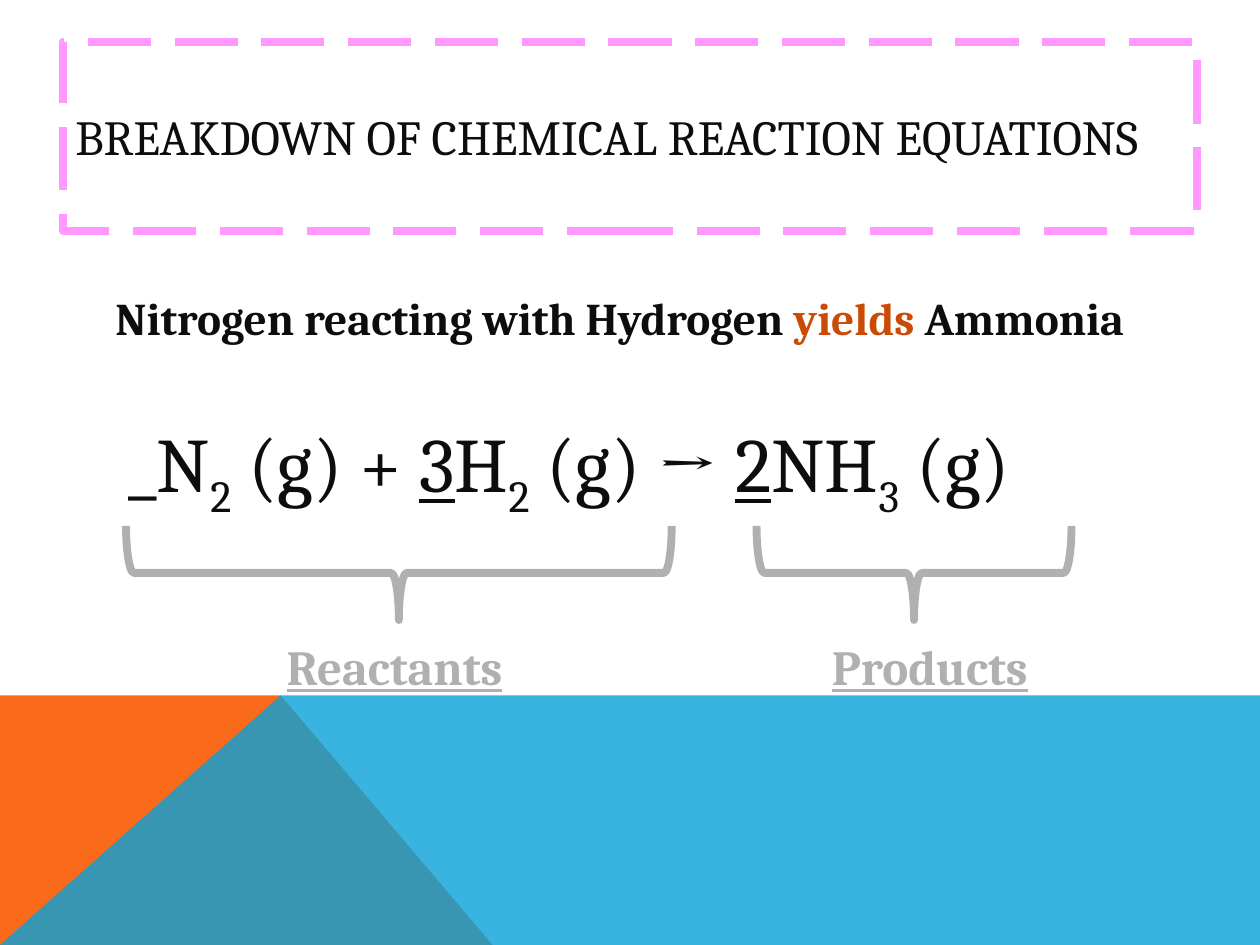
from dataclasses import dataclass

import pptx
import pptx.dml.color
import pptx.enum.dml
import pptx.enum.shapes
import pptx.enum.text
import pptx.oxml
import pptx.oxml.ns
import pptx.util
from pptx.util import Cm

COLORS = {
    "ink": "0D0D0D",
    "yields": "CA4B05",
    "gray": "AFB0B2",
    "pink": "FF99FF",
    "orange": "F96A1B",
    "blue": "08A1D9",
}
FONT = "Cambria"
WIDTH, HEIGHT = 25.4, 19.05
BAND_TOP, PEAK = 14.02, 5.66
BRACE_TOP, BRACE_DEPTH = 10.6, 1.9
LABEL_TOP, LABEL_WIDTH, LABEL_HEIGHT = 12.7, 6.15, 1.47


@dataclass
class Piece:
    text: str
    color: str | None = None
    underline: bool = False
    subscript: bool = False


@dataclass
class Side:
    label: str
    label_left: float
    brace_left: float
    brace_width: float


HEADLINE = [Piece("BREAKDOWN OF CHEMICAL REACTION EQUATIONS")]
SENTENCE = [
    Piece("Nitrogen reacting with Hydrogen ", "ink"),
    Piece("yields ", "yields"),
    Piece("Ammonia", "ink"),
]
EQUATION = [
    Piece("_N"),
    Piece("2", subscript=True),
    Piece(" (g) + "),
    Piece("3", underline=True),
    Piece("H"),
    Piece("2", subscript=True),
    Piece(" (g) → "),
    Piece("2", underline=True),
    Piece("NH"),
    Piece("3", subscript=True),
    Piece(" (g)"),
]
SIDES = [
    Side("Reactants", 4.88, 2.54, 11),
    Side("Products", 15.67, 15.25, 6.35),
]


def rgb(name: str) -> pptx.dml.color.RGBColor:
    return pptx.dml.color.RGBColor.from_string(COLORS[name])


def write(shape, pieces: list[Piece], size: float, color: str = "ink",
          bold: bool = False, centered: bool = False):
    frame = shape.text_frame
    frame.word_wrap = True
    paragraph = frame.paragraphs[0]
    align = pptx.enum.text.PP_ALIGN
    paragraph.alignment = align.CENTER if centered else align.LEFT
    font = paragraph.font
    font.name, font.size, font.bold = FONT, pptx.util.Pt(size), bold
    if not any(piece.color for piece in pieces):
        font.color.rgb = rgb(color)
    for piece in pieces:
        run = paragraph.add_run()
        run.text = piece.text
        if piece.color:
            run.font.color.rgb = rgb(piece.color)
        if piece.underline:
            run.font.underline = True
        if piece.subscript:
            run.font._element.set("baseline", "-25000")
    return paragraph


def add_band(slide, points: list[tuple[float, float]], color: str, opacity: int = 100) -> None:
    corners = [(Cm(x), Cm(y)) for x, y in points]
    builder = slide.shapes.build_freeform(*corners[0])
    builder.add_line_segments(corners[1:], close=True)
    band = builder.convert_to_shape()
    band.shadow.inherit = False
    band.fill.solid()
    band.fill.fore_color.rgb = rgb(color)
    band.line.fill.background()
    if opacity < 100:
        srgb = band._element.spPr.find(".//" + pptx.oxml.ns.qn("a:srgbClr"))
        alpha = pptx.oxml.parse_xml(f'<a:alpha {pptx.oxml.ns.nsdecls("a")} val="{opacity * 1000}"/>')
        srgb.append(alpha)


def add_outline(slide, kind, left: float, top: float, width: float, height: float, color: str):
    shape = slide.shapes.add_shape(kind, Cm(left), Cm(top), Cm(width), Cm(height))
    shape.shadow.inherit = False
    shape.fill.background()
    shape.line.color.rgb = rgb(color)
    shape.line.width = pptx.util.Pt(4.5)
    return shape


def add_text(slide, left: float, top: float, width: float, height: float):
    return slide.shapes.add_textbox(Cm(left), Cm(top), Cm(width), Cm(height))


def add_side(slide, side: Side) -> None:
    left = side.brace_left + (side.brace_width - BRACE_DEPTH) / 2
    top = BRACE_TOP + (BRACE_DEPTH - side.brace_width) / 2
    brace = add_outline(slide, pptx.enum.shapes.MSO_SHAPE.RIGHT_BRACE,
                        left, top, BRACE_DEPTH, side.brace_width, "gray")
    brace.rotation = 90
    label = add_text(slide, side.label_left, LABEL_TOP, LABEL_WIDTH, LABEL_HEIGHT)
    paragraph = write(label, [Piece(side.label)], 28, "gray", bold=True, centered=True)
    paragraph.font.underline = True
    paragraph.runs[0].font.underline = True


def main() -> None:
    deck = pptx.Presentation()
    deck.slide_width, deck.slide_height = Cm(WIDTH), Cm(HEIGHT)
    slide = deck.slides.add_slide(deck.slide_layouts[6])

    add_band(slide, [(0, HEIGHT), (0, BAND_TOP), (PEAK, BAND_TOP), (9.93, HEIGHT)], "orange")
    add_band(slide, [(0, HEIGHT), (PEAK, BAND_TOP), (WIDTH, BAND_TOP), (WIDTH, HEIGHT)], "blue", 80)

    headline = add_outline(slide, pptx.enum.shapes.MSO_SHAPE.RECTANGLE, 1.27, 0.84, 22.86, 3.81, "pink")
    headline.line.dash_style = pptx.enum.dml.MSO_LINE.LONG_DASH
    headline.text_frame.vertical_anchor = pptx.enum.text.MSO_ANCHOR.MIDDLE
    write(headline, HEADLINE, 28)

    sentence = add_text(slide, 1.7, 5.72, 21.59, 1.9)
    write(sentence, SENTENCE, 25.9, bold=True, centered=True).space_before = pptx.util.Pt(8)

    equation = add_text(slide, 2.34, 8.26, 20.12, 4.01)
    write(equation, EQUATION, 44)

    for side in SIDES:
        add_side(slide, side)

    deck.save("out.pptx")


if __name__ == "__main__":
    main()
